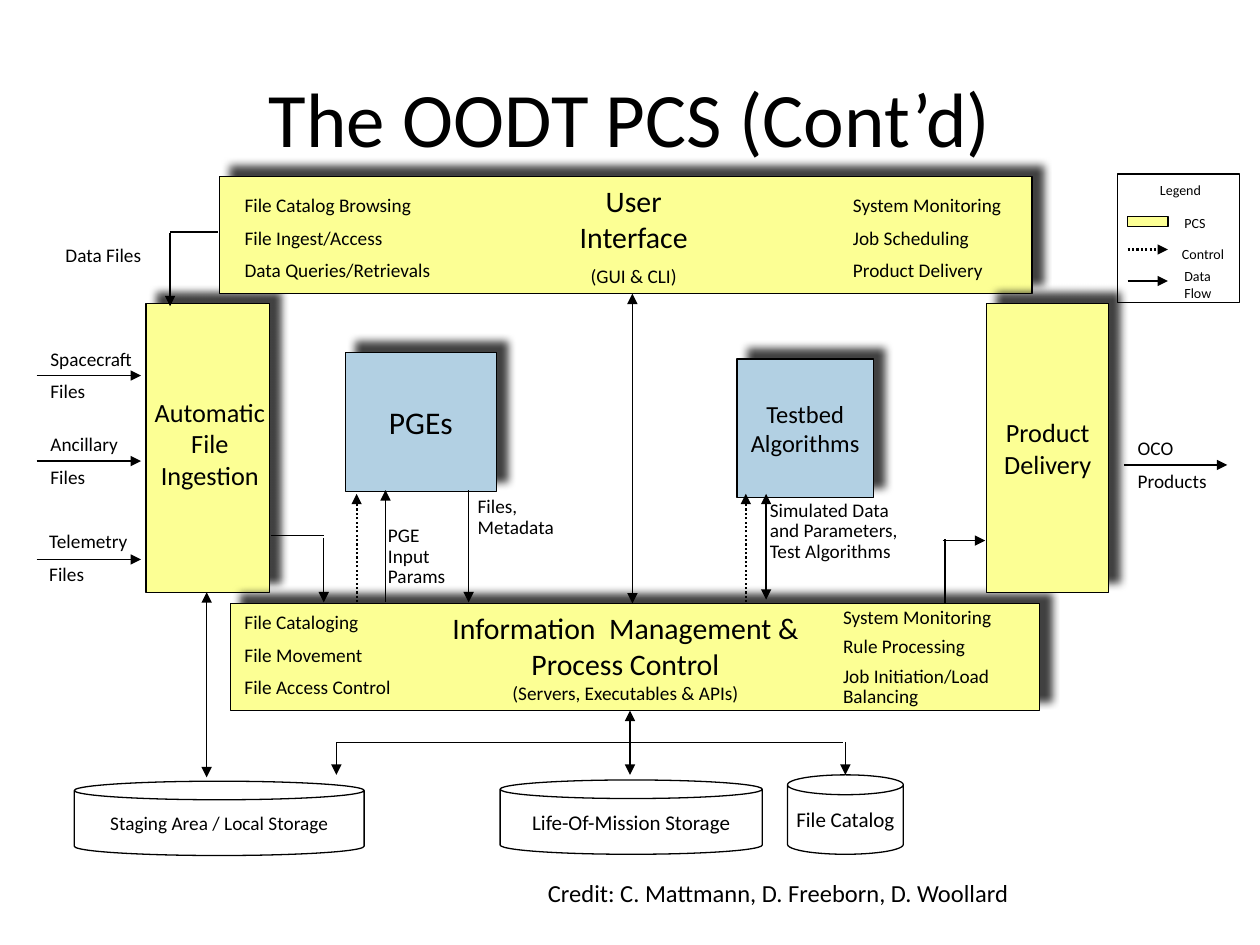
from lxml import etree
from pptx import Presentation
from pptx.dml.color import RGBColor
from pptx.enum.dml import MSO_LINE
from pptx.enum.shapes import MSO_CONNECTOR, MSO_SHAPE
from pptx.enum.text import MSO_ANCHOR, PP_ALIGN
from pptx.oxml.ns import qn
from pptx.util import Pt

RECT, CAN = MSO_SHAPE.RECTANGLE, MSO_SHAPE.CAN
STRAIGHT = MSO_CONNECTOR.STRAIGHT
DOTS = MSO_LINE.ROUND_DOT
TOP, MIDDLE = MSO_ANCHOR.TOP, MSO_ANCHOR.MIDDLE
LEFT, CENTER = PP_ALIGN.LEFT, PP_ALIGN.CENTER

COLORS = {"ink": "000000", "pcs": "FCFF94", "algo": "B2D0E3"}
FACE = "Calibri"
PAD = (7.9, 3.8)
KEY_PAD = (9.4, 4.5)


def color(name):
    return RGBColor.from_string(COLORS[name])


def write(frame, lines, pad=PAD, anchor=TOP, align=LEFT, wrap=True):
    """Fill a frame with (text, size, line spacing) paragraphs."""
    side, edge = Pt(pad[0]), Pt(pad[1])
    look = {"word_wrap": wrap, "vertical_anchor": anchor,
            "margin_left": side, "margin_right": side,
            "margin_top": edge, "margin_bottom": edge}
    for key, value in look.items():
        setattr(frame, key, value)
    for i, (words, size, pitch) in enumerate(lines):
        para = frame.paragraphs[0] if i == 0 else frame.add_paragraph()
        para.alignment = align
        if pitch != 1:
            para.line_spacing = pitch
        if i:
            para.space_before = Pt(size / 2)
        run = para.add_run()
        run.text = words
        for key, value in {"name": FACE, "size": Pt(size)}.items():
            setattr(run.font, key, value)
        run.font.color.rgb = color("ink")


def label(slide, at, lines, **look):
    box = slide.shapes.add_textbox(*map(Pt, at))
    write(box.text_frame, lines, **look)


def rows(*words, size=11, pitch=1):
    return [(word, size, pitch) for word in words]


def shade(shape):
    """Cast a soft shadow to the upper right."""
    glow = shape._element.spPr.find(qn("a:effectLst"))
    cast = etree.SubElement(glow, qn("a:outerShdw"), blurRad=str(Pt(5)),
                            dist=str(Pt(8.5)), dir=str(315 * 60000),
                            algn="ctr", rotWithShape="0")
    tint = etree.SubElement(cast, qn("a:srgbClr"), val=COLORS["ink"])
    etree.SubElement(tint, qn("a:alpha"), val="75000")


def block(slide, at, fill=None, lines=(), kind=RECT, cast=False):
    shape = slide.shapes.add_shape(kind, *map(Pt, at))
    shape.shadow.inherit = False
    if fill:
        shape.fill.solid()
        shape.fill.fore_color.rgb = color(fill)
    else:
        shape.fill.background()
    shape.line.color.rgb = color("ink")
    shape.line.width = Pt(0.75)
    if cast:
        shade(shape)
    if lines:
        write(shape.text_frame, lines, pad=(0, 0), anchor=MIDDLE, align=CENTER)


def link(slide, ends, tips="tail", dots=False):
    """Draw a line; tips names the ends that carry an arrowhead."""
    line = slide.shapes.add_connector(STRAIGHT, *map(Pt, ends))
    line.line.color.rgb = color("ink")
    line.line.width = Pt(1.25 if dots else 0.75)
    if dots:
        line.line.dash_style = DOTS
    props = line._element.spPr
    for tip in tips.split():
        etree.SubElement(props.find(qn("a:ln")), qn(f"a:{tip}End"),
                         type="triangle")
    etree.SubElement(props, qn("a:effectLst"))


def add_title(slide):
    title = slide.shapes.title
    for key, value in {"left": 36, "top": 21.6, "width": 648,
                       "height": 90}.items():
        setattr(title, key, Pt(value))
    write(title.text_frame, rows("The OODT PCS (Cont’d)", size=44),
          pad=(7.2, 3.6), anchor=MIDDLE, align=CENTER)


def add_blocks(slide):
    # Components
    for at, fill, lines in (
        ((83.5, 173.5, 70.5, 165), "pcs", ()),
        ((131.8, 344.9, 462.2, 61.2), "pcs", ()),
        ((125.3, 100.8, 464.4, 67), "pcs", ()),
        ((563.8, 173.5, 69.8, 165), "pcs", rows("Product Delivery", size=15)),
        ((197.3, 201.6, 86.4, 79.2), "algo", rows("PGEs", size=18)),
        ((421.2, 205.2, 77.8, 79.2), "algo",
         rows("Testbed Algorithms", size=14)),
    ):
        block(slide, at, fill, lines, cast=True)

    # Stores
    for at, words, size in (
        ((42.5, 446.4, 165.6, 42.5), "Staging Area / Local Storage", 11),
        ((285.8, 445.7, 149.8, 42.5), "Life-Of-Mission Storage", 12),
        ((450, 442.8, 66.2, 45.4), "File Catalog", 12),
    ):
        block(slide, at, lines=rows(words, size=size), kind=CAN)


def add_labels(slide):
    # Component names
    for at, lines in (
        ((317.5, 100.8, 89.3, 68.4),
         [("User Interface", 17, 1), ("(GUI & CLI)", 11, 1)]),
        ((77.8, 222.5, 84.2, 61.9),
         rows("Automatic File Ingestion", size=15)),
        ((246.2, 344.9, 222.5, 61.9),
         [("Information  Management & Process Control", 17, 1),
          ("(Servers, Executables & APIs)", 11, 0.5)]),
    ):
        label(slide, at, lines, align=CENTER)

    # Duties and data names
    for at, lines in (
        ((131.8, 106.6, 173.5, 60.5),
         rows("File Catalog Browsing", "File Ingest/Access",
              "Data Queries/Retrievals")),
        ((479.5, 106.6, 108, 60.5),
         rows("System Monitoring", "Job Scheduling", "Product Delivery")),
        ((131.8, 344.9, 120.2, 60.5),
         rows("File Cataloging", "File Movement", "File Access Control")),
        ((473.8, 344.9, 113.8, 66.2),
         rows("System Monitoring", "Rule Processing", pitch=0.8)
         + rows("Job Initiation/Load Balancing", pitch=0.9)),
        ((29.5, 135.4, 87.1, 20.9), rows("Data Files")),
        ((20.9, 194.4, 75.6, 41), rows("Spacecraft", "Files")),
        ((20.9, 243.4, 78.5, 41), rows("Ancillary", "Files")),
        ((20.2, 298.8, 71.3, 41), rows("Telemetry", "Files")),
        ((642.2, 245.5, 70.6, 41), rows("OCO", "Products")),
        ((265, 280.1, 70.6, 31.7), rows("Files, Metadata", pitch=0.9)),
        ((213.8, 296.6, 54, 43.2), rows("PGE Input Params", pitch=0.9)),
        ((432, 282.2, 95.8, 55.4),
         rows("Simulated Data and Parameters, Test Algorithms", pitch=0.9)),
    ):
        label(slide, at, lines)

    # Credit
    label(slide, (306, 498.2, 281.5, 24.5),
          rows("Credit: C. Mattmann, D. Freeborn, D. Woollard", size=14),
          pad=(7.2, 3.6), wrap=False)


def add_links(slide):
    # Incoming files
    for y in (214.6, 263.5, 319.7):
        link(slide, (20.9, y, 80.6, y))
    # One-way flows
    for ends in (
        (642.2, 265.7, 701.3, 265.7), (192.2, 424.1, 192.2, 442.8),
        (483.1, 424.1, 483.1, 442.8), (360, 424.1, 360, 406.1),
        (360, 424.1, 360, 442.8), (185, 307.4, 185, 344.2),
        (220.3, 344.2, 220.3, 280.1), (267.8, 280.1, 267.8, 344.2),
        (538.6, 308.9, 563, 308.9), (97.2, 133.2, 97.2, 175),
    ):
        link(slide, ends)
    # Two-way flows
    for x, start, end in ((361.4, 344.9, 167.8), (437.8, 342.7, 282.2),
                          (118.1, 338.4, 444.2)):
        link(slide, (x, start, x, end), tips="head tail")
    # Plain bends
    for ends in ((192.2, 424.1, 481.7, 424.1), (154.8, 306, 185, 306),
                 (540, 308.2, 540, 344.9), (97.2, 132.5, 124.6, 132.5)):
        link(slide, ends, tips="")
    # Control
    for x in (203.8, 426.2):
        link(slide, (x, 344.2, x, 282.2), dots=True)


def add_legend(slide):
    block(slide, (638.6, 99.4, 69.8, 73.4))
    block(slide, (644.4, 123.8, 23, 5.8), "pcs")
    link(slide, (644.4, 142.6, 667.4, 142.6), dots=True)
    link(slide, (644.4, 160.6, 667.4, 160.6))
    for at, words, align in (
        ((645.8, 99.4, 57.6, 18.7), "Legend", CENTER),
        ((667.4, 118.1, 46.1, 18.7), "PCS", LEFT),
        ((666, 136.1, 46.8, 18.7), "Control", LEFT),
        ((667.4, 148.3, 46.1, 28.1), "Data Flow", LEFT),
    ):
        label(slide, at, rows(words, size=8), pad=KEY_PAD, align=align)


def main():
    deck = Presentation()
    deck.slide_width, deck.slide_height = Pt(720), Pt(540)
    slide = deck.slides.add_slide(deck.slide_layouts[5])
    for draw in (add_title, add_blocks, add_links, add_labels, add_legend):
        draw(slide)
    deck.save("out.pptx")


if __name__ == "__main__":
    main()
